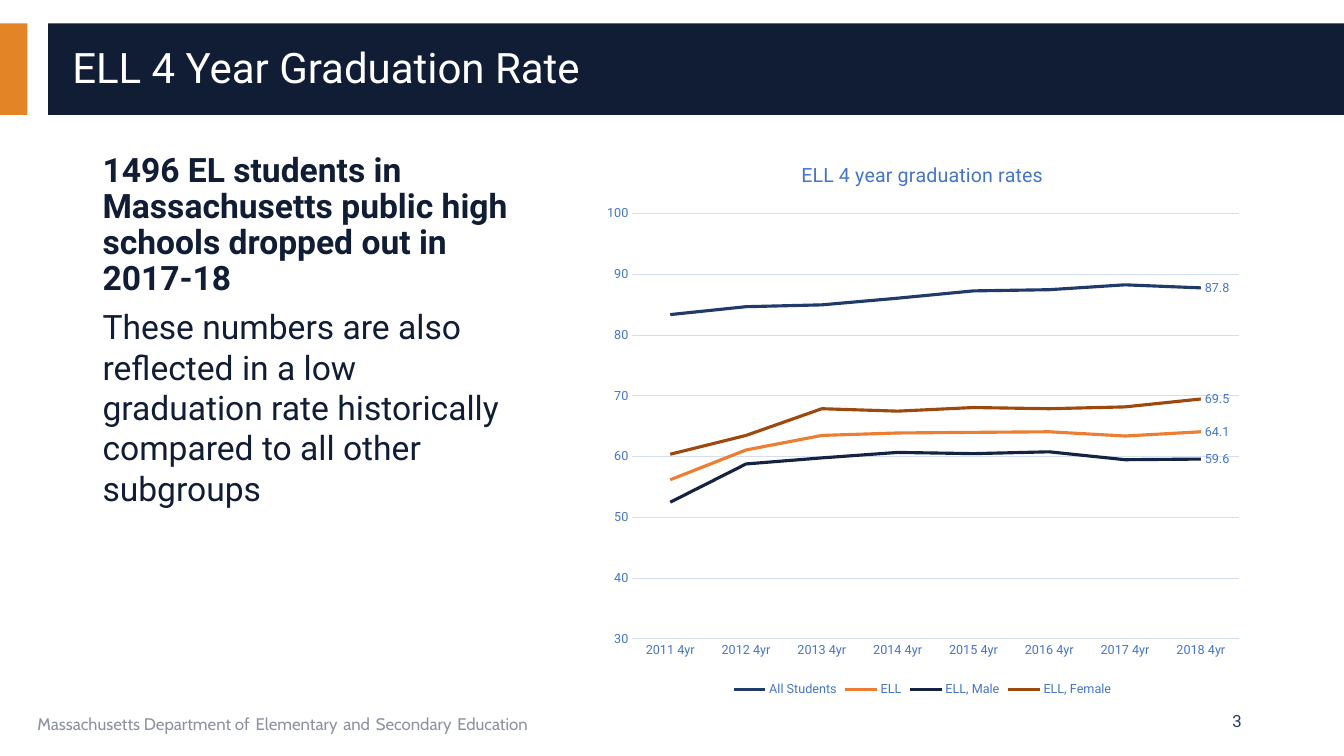
from dataclasses import dataclass

from lxml import etree
from pptx import Presentation
from pptx.chart.chart import Chart
from pptx.chart.data import CategoryChartData
from pptx.dml.color import RGBColor
from pptx.enum.chart import XL_CHART_TYPE, XL_LABEL_POSITION, XL_LEGEND_POSITION, XL_TICK_MARK
from pptx.enum.shapes import MSO_SHAPE
from pptx.enum.text import MSO_ANCHOR, PP_ALIGN
from pptx.oxml import parse_xml
from pptx.oxml.ns import nsdecls, qn
from pptx.slide import Slide
from pptx.text.text import Font
from pptx.util import Pt

RECTANGLE = MSO_SHAPE.RECTANGLE
TOP, MIDDLE = MSO_ANCHOR.TOP, MSO_ANCHOR.MIDDLE
LEFT, RIGHT = PP_ALIGN.LEFT, PP_ALIGN.RIGHT
LINE_CHART = XL_CHART_TYPE.LINE
LEGEND_BOTTOM = XL_LEGEND_POSITION.BOTTOM
LABEL_RIGHT = XL_LABEL_POSITION.RIGHT
NO_TICK = XL_TICK_MARK.NONE


@dataclass(frozen=True)
class Theme:
    white: str = "FFFFFF"
    navy: str = "101D35"
    blue: str = "203B6A"
    orange: str = "E38526"
    grey: str = "8D92A1"
    chart_text: str = "4575C7"
    grid: str = "D4DFF2"
    ell: str = "ED7D31"
    male: str = "132340"
    female: str = "9E480E"
    body_font: str = "Roboto"
    footer_font: str = "Cabin"
    title_size: float = 30
    body_size: float = 24
    gap_size: float = 18
    chart_title_size: float = 14
    small_size: float = 12
    chart_size: float = 9


THEME = Theme()


@dataclass(frozen=True)
class Box:
    left: float
    top: float
    width: float
    height: float

    def lengths(self) -> tuple[Pt, Pt, Pt, Pt]:
        return Pt(self.left), Pt(self.top), Pt(self.width), Pt(self.height)


@dataclass(frozen=True)
class Band:
    box: Box
    color: str


@dataclass(frozen=True)
class Words:
    text: str
    size: float
    color: str
    font: str = THEME.body_font
    bold: bool = False


@dataclass(frozen=True)
class TextBlock:
    box: Box
    runs: tuple[Words, ...]
    anchor: MSO_ANCHOR = TOP
    align: PP_ALIGN = LEFT
    line_spacing: float = 1.0


@dataclass(frozen=True)
class Group:
    name: str
    rates: tuple[float, ...]
    color: str


def footer_runs(*parts: str) -> tuple[Words, ...]:
    gap = Words(" ", THEME.gap_size, THEME.blue, THEME.footer_font)
    runs: list[Words] = []
    for part in parts:
        runs += [gap, Words(part, THEME.small_size, THEME.grey, THEME.footer_font)]
    return tuple(runs[1:])


BANDS = (
    Band(Box(0, 16.8, 19.6, 65.3), THEME.orange),
    Band(Box(34.3, 16.8, 925.7, 65.3), THEME.navy),
)

TEXT_BLOCKS = (
    TextBlock(Box(19.6, 500.4, 607.7, 28.8),
              footer_runs("Massachusetts Department of", "Elementary", "and", "Secondary", "Education"),
              MIDDLE),
    TextBlock(Box(66.2, 215.3, 309.6, 246.2),
              (Words("These numbers are also reflected in a low graduation rate historically "
                     "compared to all other subgroups", THEME.body_size, THEME.navy),)),
    TextBlock(Box(678.2, 500.4, 216, 28.8),
              (Words("3", THEME.small_size, THEME.blue),), MIDDLE, RIGHT),
    TextBlock(Box(44.6, 28.1, 895.7, 43.2),
              (Words("ELL 4 Year Graduation Rate", THEME.title_size, THEME.white),),
              MIDDLE, line_spacing=0.9),
    TextBlock(Box(66.2, 105.8, 309.6, 98.6),
              (Words("1496 EL students in Massachusetts public high schools dropped out in 2017-18",
                     THEME.body_size, THEME.navy, bold=True),), line_spacing=0.9),
)

CHART_BOX = Box(423.4, 100.8, 470.9, 399.6)
PLOT_SHARE = {"x": 0.06, "y": 0.13, "w": 0.92, "h": 0.76}
YEARS = range(2011, 2019)
GROUPS = (
    Group("All Students", (83.4, 84.7, 85, 86.1, 87.3, 87.5, 88.3, 87.8), THEME.blue),
    Group("ELL", (56.2, 61.1, 63.5, 63.9, 64, 64.1, 63.4, 64.1), THEME.ell),
    Group("ELL, Male", (52.5, 58.8, 59.8, 60.7, 60.5, 60.8, 59.5, 59.6), THEME.male),
    Group("ELL, Female", (60.4, 63.5, 67.9, 67.5, 68.1, 67.9, 68.2, 69.5), THEME.female),
)


def style_font(font: Font, size: float, color: str, name: str = THEME.body_font, bold: bool = False) -> None:
    font.size = Pt(size)
    font.name = name
    font.bold = bold
    font.color.rgb = RGBColor.from_string(color)


def draw_band(slide: Slide, band: Band) -> None:
    bar = slide.shapes.add_shape(RECTANGLE, *band.box.lengths())
    bar.shadow.inherit = False
    bar.fill.solid()
    bar.fill.fore_color.rgb = RGBColor.from_string(band.color)
    bar.line.fill.background()


def draw_text(slide: Slide, block: TextBlock) -> None:
    frame = slide.shapes.add_textbox(*block.box.lengths()).text_frame
    frame.word_wrap = True
    frame.vertical_anchor = block.anchor
    paragraph = frame.paragraphs[0]
    paragraph.alignment = block.align
    paragraph.line_spacing = block.line_spacing
    for words in block.runs:
        run = paragraph.add_run()
        run.text = words.text
        style_font(run.font, words.size, words.color, words.font, words.bold)


def place_plot(chart: Chart) -> None:
    plot_area = chart.element.find(f".//{qn('c:plotArea')}")
    for automatic in plot_area.findall(qn("c:layout")):
        plot_area.remove(automatic)
    layout = parse_xml(f"<c:layout {nsdecls('c')}><c:manualLayout/></c:layout>")
    settings = {"layoutTarget": "inner", "xMode": "edge", "yMode": "edge", **PLOT_SHARE}
    for tag, value in settings.items():
        etree.SubElement(layout[0], qn(f"c:{tag}")).set("val", str(value))
    plot_area.insert(0, layout)


def draw_rates(slide: Slide) -> None:
    rates = CategoryChartData()
    rates.categories = [f"{year} 4yr" for year in YEARS]
    for group in GROUPS:
        rates.add_series(group.name, group.rates)
    chart = slide.shapes.add_chart(LINE_CHART, *CHART_BOX.lengths(), rates).chart
    style_font(chart.font, THEME.chart_size, THEME.chart_text)

    heading = chart.chart_title.text_frame.paragraphs[0].add_run()
    heading.text = "ELL 4 year graduation rates"
    style_font(heading.font, THEME.chart_title_size, THEME.chart_text)

    chart.has_legend = True
    chart.legend.position = LEGEND_BOTTOM
    chart.legend.include_in_layout = False
    style_font(chart.legend.font, THEME.chart_size, THEME.chart_text)

    year_axis, rate_axis = chart.category_axis, chart.value_axis
    for axis in (year_axis, rate_axis):
        axis.major_tick_mark = axis.minor_tick_mark = NO_TICK
        style_font(axis.tick_labels.font, THEME.chart_size, THEME.chart_text)
    rate_axis.minimum_scale, rate_axis.maximum_scale, rate_axis.major_unit = 30, 100, 10
    rate_axis.tick_labels.number_format = "#,##0"
    rate_axis.tick_labels.number_format_is_linked = False
    rate_axis.format.line.fill.background()
    for rule in (year_axis.format.line, rate_axis.major_gridlines.format.line):
        rule.color.rgb = RGBColor.from_string(THEME.grid)
        rule.width = Pt(0.75)

    chart.plots[0].vary_by_categories = False
    for series, group in zip(chart.plots[0].series, GROUPS):
        series.smooth = False
        series.format.line.color.rgb = RGBColor.from_string(group.color)
        series.format.line.width = Pt(2.25)
        latest = series.points[len(YEARS) - 1].data_label
        style_font(latest.font, THEME.chart_size, THEME.chart_text)
        latest.position = LABEL_RIGHT
    place_plot(chart)


def main() -> None:
    deck = Presentation()
    deck.slide_width, deck.slide_height = Pt(960), Pt(540)
    slide = deck.slides.add_slide(deck.slide_layouts[6])
    for band in BANDS:
        draw_band(slide, band)
    for block in TEXT_BLOCKS:
        draw_text(slide, block)
    draw_rates(slide)
    deck.save("out.pptx")


if __name__ == "__main__":
    main()
